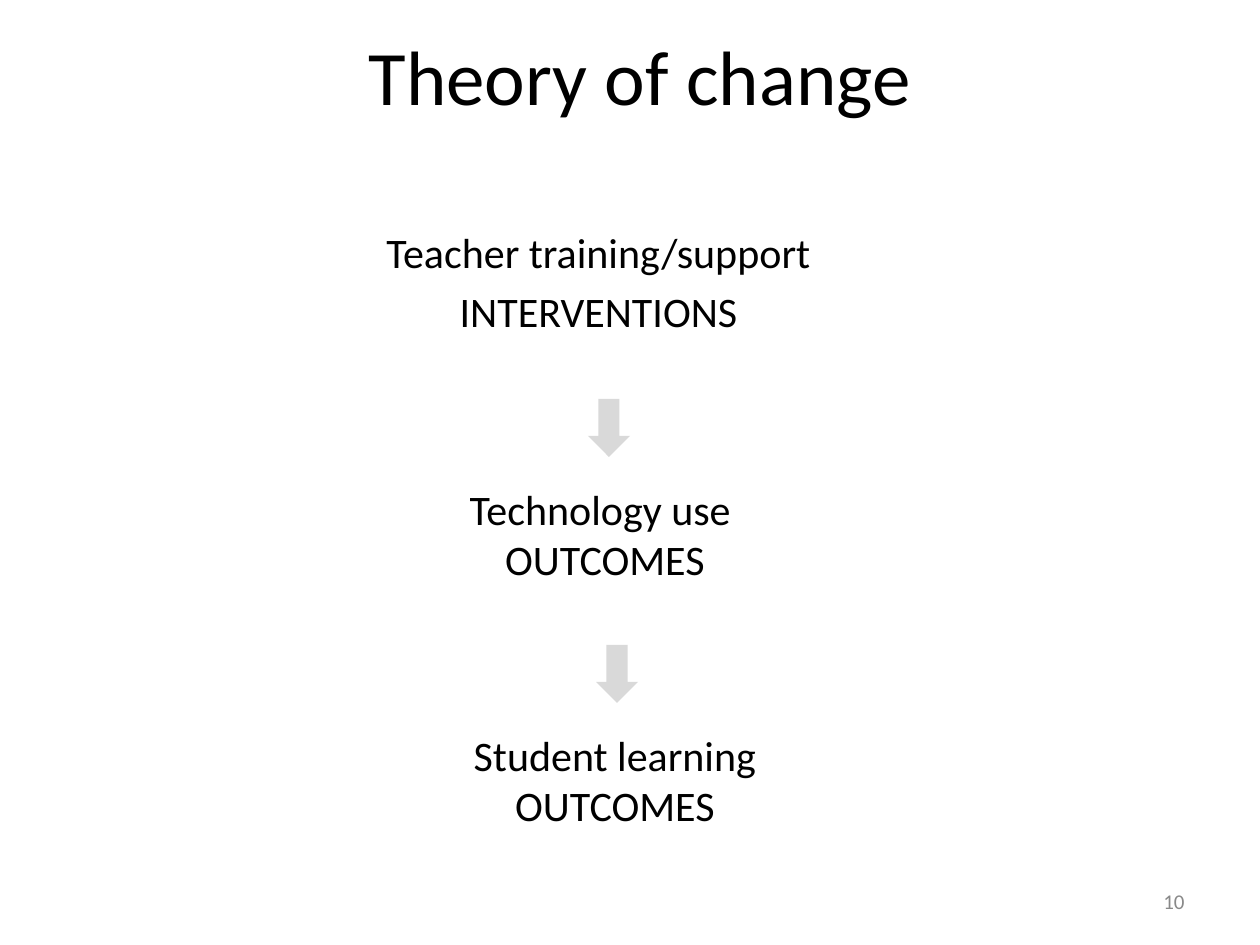
from pptx import Presentation
from pptx.dml.color import RGBColor
from pptx.enum.shapes import MSO_SHAPE as Shape
from pptx.enum.text import MSO_ANCHOR as Anchor, PP_ALIGN as Align
from pptx.util import Pt

EMU_PER_PX = 914400 / 126
FONT = "Calibri"
BLACK, GREY, ARROW_GREY = "000000", "898989", "D9D9D9"

# Stage: lines, offset and size within the flow, space between its lines
STAGES = [
    (("Teacher training/support", "INTERVENTIONS"), (0, 0, 525, 131), 4.8),
    (("Technology use ", "OUTCOMES"), (118, 257, 302, 105), 0),
    (("Student learning", "OUTCOMES"), (95, 503, 368, 105), 0),
]
ARROWS = [(252, 179), (260, 425)]
ARROW_SIZE = (42, 58)


def emu(*lengths):
    return [round(length * EMU_PER_PX) for length in lengths]


def color(value):
    return RGBColor.from_string(value)


def add_text(slide, box, lines, size=24, fill=BLACK, align=Align.CENTER,
             anchor=Anchor.TOP, gap=0):
    """Add a text box with one paragraph per line, gap points apart."""
    frame = slide.shapes.add_textbox(*emu(*box)).text_frame
    frame.word_wrap = True
    frame.vertical_anchor = anchor
    for index, line in enumerate(lines):
        paragraph = frame.add_paragraph() if index else frame.paragraphs[0]
        paragraph.text = line
        paragraph.alignment = align
        paragraph.space_before = Pt(gap if index else 0)
        paragraph.font.name = FONT
        paragraph.font.size = Pt(size)
        paragraph.font.color.rgb = color(fill)


def add_down_arrow(slide, box):
    arrow = slide.shapes.add_shape(Shape.DOWN_ARROW, *emu(*box))
    arrow.shadow.inherit = False
    arrow.fill.solid()
    arrow.fill.fore_color.rgb = color(ARROW_GREY)
    arrow.line.fill.background()


def add_title(slide, box):
    add_text(slide, box, ["Theory of change"], size=44, anchor=Anchor.MIDDLE)


def add_flow(slide, left, top):
    """Add the stages from interventions to outcomes, joined by arrows."""
    for lines, (x, y, width, height), gap in STAGES:
        add_text(slide, (left + x, top + y, width, height), lines, gap=gap)
    for x, y in ARROWS:
        add_down_arrow(slide, (left + x, top + y, *ARROW_SIZE))


def add_slide_number(slide, box):
    add_text(slide, box, ["10"], size=12, fill=GREY, align=Align.RIGHT,
             anchor=Anchor.MIDDLE)


def main():
    presentation = Presentation()
    presentation.slide_width, presentation.slide_height = emu(1260, 945)
    slide = presentation.slides.add_slide(presentation.slide_layouts[6])
    add_title(slide, (73, 10, 1134, 130))
    add_flow(slide, 336, 220)
    add_slide_number(slide, (903, 876, 294, 50))
    presentation.save("out.pptx")


if __name__ == "__main__":
    main()
